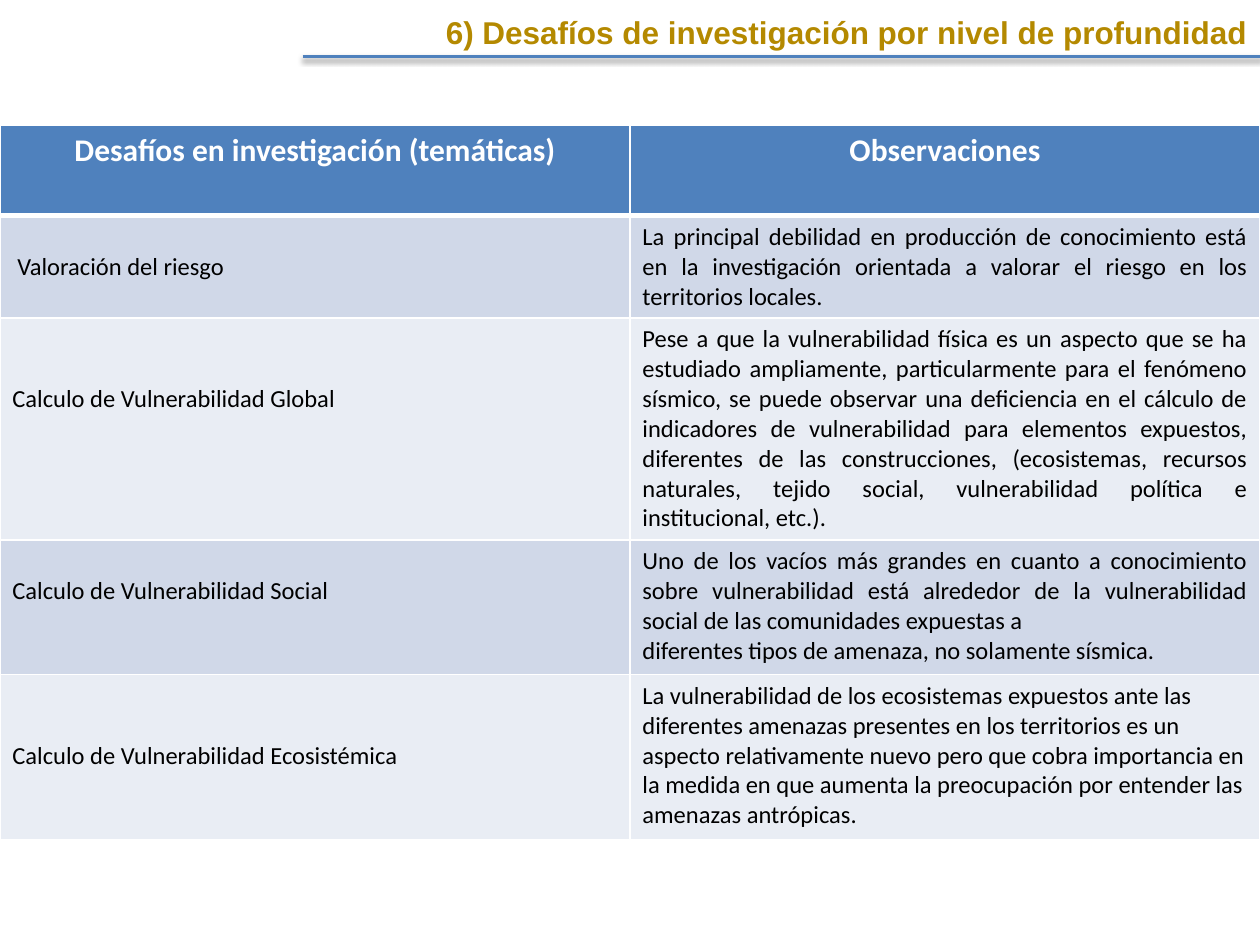
import pptx
import pptx.dml.color
import pptx.enum.shapes
import pptx.enum.text
import pptx.oxml
import pptx.oxml.ns
import pptx.util
from pptx.util import Cm

ALIGN = pptx.enum.text.PP_ALIGN
LINE_HEIGHT = 0.6
SIDE_MARGIN = 0.25
TOP_MARGIN = 0.13
HEADERS = ["Desafíos en investigación (temáticas)", "Observaciones"]
ROW_HEIGHTS = [1.83, 2.01, 4.32, 2.72, 3.33]
CHALLENGES = [
    ("Valoración del riesgo", 1, 0.1, ALIGN.JUSTIFY, [
        "La principal debilidad en producción de conocimiento está en la investigación "
        "orientada a valorar el riesgo en los territorios locales."]),
    ("Calculo de Vulnerabilidad Global", 2, 0, ALIGN.JUSTIFY, [
        "Pese a que la vulnerabilidad física es un aspecto que se ha estudiado ampliamente, "
        "particularmente para el fenómeno sísmico, se puede observar una deficiencia en el "
        "cálculo de indicadores de vulnerabilidad para elementos expuestos, diferentes de las "
        "construcciones, (ecosistemas, recursos naturales, tejido social, vulnerabilidad "
        "política e institucional, etc.)."]),
    ("Calculo de Vulnerabilidad Social", 1, 0, ALIGN.JUSTIFY, [
        "Uno de los vacíos más grandes en cuanto a conocimiento sobre vulnerabilidad está "
        "alrededor de la vulnerabilidad social de las comunidades expuestas a",
        "diferentes tipos de amenaza, no solamente sísmica."]),
    ("Calculo de Vulnerabilidad Ecosistémica", 2, 0, ALIGN.LEFT, [
        "La vulnerabilidad de los ecosistemas expuestos ante las diferentes amenazas "
        "presentes en los territorios es un",
        "aspecto relativamente nuevo pero que cobra importancia en la medida en que aumenta "
        "la preocupación por entender las amenazas antrópicas."]),
]


def color(code):
    return pptx.dml.color.RGBColor.from_string(code)


def element(xml):
    namespace = pptx.oxml.ns.nsdecls("a")
    return pptx.oxml.parse_xml(xml.replace(" NS", " " + namespace, 1))


class SlideBuilder:
    blue = "4F81BD"
    gold = "B48900"
    white = "FFFFFF"
    black = "000000"
    bands = ["D0D8E8", "E9EDF4"]

    def __init__(self, slide):
        self.slide = slide

    def add_text(self, frame, texts, size, font, ink, bold=False, align=ALIGN.LEFT):
        for index, text in enumerate(texts):
            para = frame.paragraphs[0] if index == 0 else frame.add_paragraph()
            para.alignment = align
            span = para.add_run()
            span.text = text
            span.font.size = pptx.util.Pt(size)
            span.font.name = font
            span.font.bold = bold
            span.font.color.rgb = color(ink)

    def title(self, text, left, top, width, height):
        box = self.slide.shapes.title
        box.left, box.top, box.width, box.height = Cm(left), Cm(top), Cm(width), Cm(height)
        frame = box.text_frame
        frame.word_wrap = True
        frame.auto_size = pptx.enum.text.MSO_AUTO_SIZE.NONE
        frame.vertical_anchor = pptx.enum.text.MSO_ANCHOR.TOP
        self.add_text(frame, [text], 18, "Arial", self.gold, True, ALIGN.RIGHT)

    def rule(self, left, right, y):
        line = self.slide.shapes.add_connector(
            pptx.enum.shapes.MSO_CONNECTOR.STRAIGHT, Cm(left), Cm(y), Cm(right), Cm(y))
        line.line.color.rgb = color(self.blue)
        line.line.width = pptx.util.Pt(2)
        line._element.spPr.append(element(
            '<a:effectLst NS><a:outerShdw blurRad="40000" dist="20000" dir="5400000" '
            'rotWithShape="0"><a:srgbClr val="000000"><a:alpha val="38000"/></a:srgbClr>'
            '</a:outerShdw></a:effectLst>'))

    def table(self, left, top, width, heights, columns):
        frame = self.slide.shapes.add_table(
            len(heights), columns, Cm(left), Cm(top), Cm(width), Cm(sum(heights)))
        grid = frame.table
        grid.first_row = grid.horz_banding = False
        for row, height in zip(grid.rows, heights):
            row.height = Cm(height)
        for column in grid.columns:
            column.width = Cm(width / columns)
        return grid

    def cell(self, grid, row, column, texts, align, lines_above=0, indent=0):
        cell = grid.cell(row, column)
        header = row == 0
        cell.margin_left = Cm(SIDE_MARGIN + indent)
        cell.margin_right = Cm(SIDE_MARGIN)
        cell.margin_top = Cm(TOP_MARGIN + lines_above * LINE_HEIGHT)
        cell.margin_bottom = Cm(TOP_MARGIN)
        cell.vertical_anchor = pptx.enum.text.MSO_ANCHOR.TOP
        cell.fill.solid()
        cell.fill.fore_color.rgb = color(self.blue if header else self.bands[(row - 1) % 2])
        widths = {"L": 1, "R": 1, "T": 3 if row == 1 else 1, "B": 3 if header else 1}
        for position, (side, width) in enumerate(widths.items()):
            cell._tc.get_or_add_tcPr().insert(position, element(
                f'<a:ln{side} NS w="{pptx.util.Pt(width)}"><a:solidFill>'
                f'<a:srgbClr val="{self.white}"/></a:solidFill></a:ln{side}>'))
        self.add_text(cell.text_frame, texts, 18 if header else 14, "Calibri",
                      self.white if header else self.black, header, align)


def main():
    deck = pptx.Presentation()
    deck.slide_width, deck.slide_height = Cm(25.4), Cm(19.05)
    page = SlideBuilder(deck.slides.add_slide(deck.slide_layouts[5]))

    grid = page.table(0, 2.52, 25.4, ROW_HEIGHTS, len(HEADERS))
    for column, header in enumerate(HEADERS):
        page.cell(grid, 0, column, [header], ALIGN.CENTER)
    for row, (topic, lines_above, indent, align, remarks) in enumerate(CHALLENGES, 1):
        page.cell(grid, row, 0, [topic], ALIGN.LEFT, lines_above, indent)
        page.cell(grid, row, 1, remarks, align)

    page.title("6) Desafíos de investigación por nivel de profundidad", 6.4, 0.13, 19, 1.02)
    page.rule(6.1, 25.4, 1.14)
    deck.save("out.pptx")


if __name__ == "__main__":
    main()
